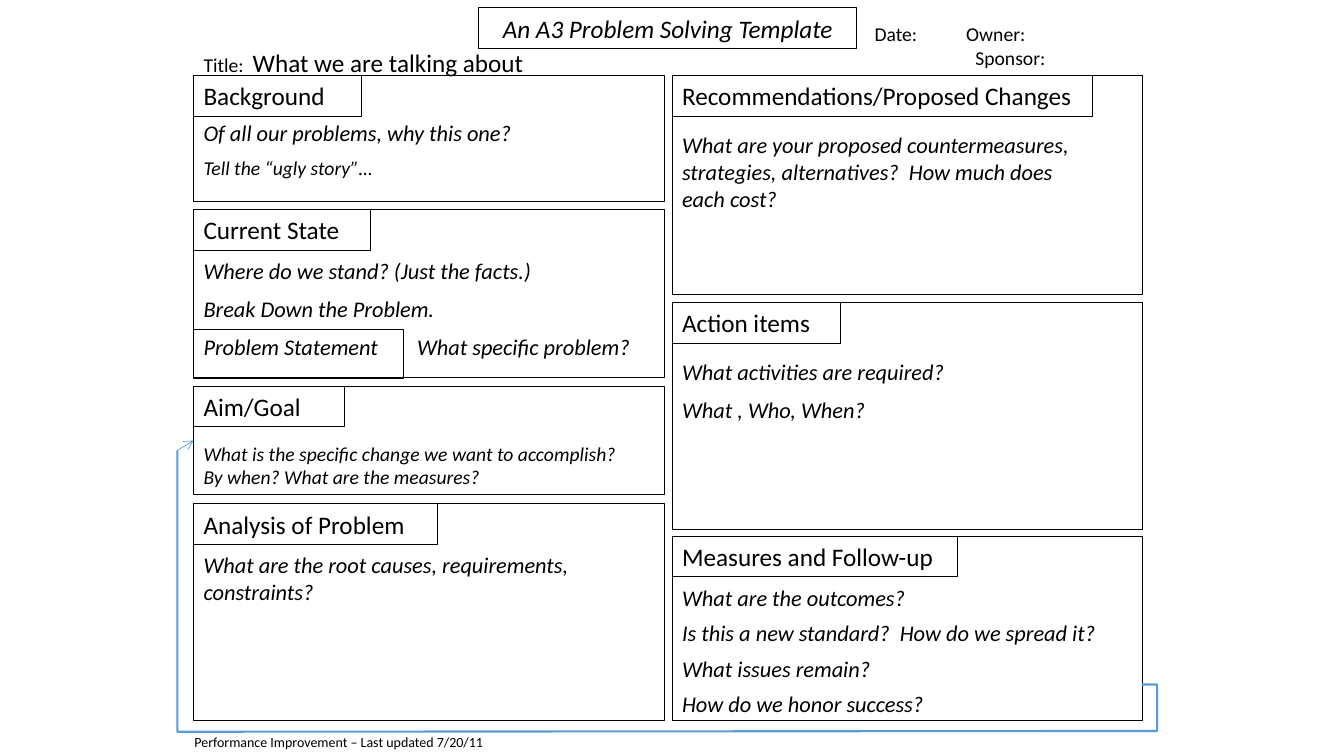
from dataclasses import dataclass

from lxml.etree import SubElement
from pptx import Presentation
from pptx.dml.color import RGBColor as Rgb
from pptx.enum.shapes import MSO_CONNECTOR as Link, MSO_SHAPE as Kind
from pptx.enum.text import MSO_ANCHOR as Anchor, PP_ALIGN as Align
from pptx.oxml.ns import qn
from pptx.shapes.autoshape import Shape
from pptx.shapes.shapetree import SlideShapes as Shapes
from pptx.text.text import _Paragraph as Para
from pptx.util import Cm, Pt


@dataclass(frozen=True)
class Theme:
    font: str = "Calibri"
    ink: Rgb = Rgb(0, 0, 0)
    blue: Rgb = Rgb(0x5B, 0x9B, 0xD5)
    head: int = 18
    body: int = 16
    small: int = 14
    foot: int = 10


@dataclass(frozen=True)
class Line:
    text: str
    size: int
    italic: bool = False
    gap: float = 0
    tabs: tuple[float, ...] = ()
    align: Align = Align.LEFT


@dataclass(frozen=True)
class Panel:
    """One section: a frame, a heading label and its guiding questions."""
    name: str
    left: float
    top: float
    height: float
    label: float
    note_top: float
    note_width: float
    lines: tuple[Line, ...]


THEME = Theme()
LEFT, RIGHT, WIDTH, LABEL = 4.88, 16.94, 11.86, 1.03


def ask(text: str, size: int = THEME.body, gap: float | None = None,
        tabs: tuple[float, ...] = ()) -> Line:
    """An italic question; the gap above it is half its size by default."""
    return Line(text, size, True, size / 2 if gap is None else gap, tabs)


AIM = Panel("Aim/Goal", LEFT, 9.73, 2.74, 3.81, 11, 11, (
    ask("What is the specific change we want to accomplish? "
        "By when? What are the measures?", THEME.small),))
PANELS = (
    Panel("Background", LEFT, 1.91, 3.18, 4.24, 2.87, 11.43, (
        ask("Of all our problems, why this one?"),
        ask("Tell the “ugly story”…", THEME.small))),
    Panel("Current State", LEFT, 5.28, 4.24, 4.45, 6.35, 11.63, (
        ask("Where do we stand? (Just the facts.)"),
        ask("Break Down the Problem."),
        ask("Problem Statement\tWhat specific problem?", tabs=(5.38,)))),
    AIM,
    Panel("Analysis of Problem", LEFT, 12.7, 5.46, 6.15, 13.77, 11.63, (
        ask("What are the root causes, requirements, constraints?"),)),
    Panel("Recommendations/Proposed Changes", RIGHT, 1.91, 5.51, 10.59, 3.18, 10.8, (
        ask("What are your proposed countermeasures, strategies, "
            "alternatives?  How much does each cost?"),)),
    Panel("Action items", RIGHT, 7.62, 5.72, 4.24, 8.89, 11, (
        ask("What activities are required?"),
        ask("What , Who, When?"))),
    Panel("Measures and Follow-up", RIGHT, 13.51, 4.65, 7.19, 14.6, 11, (
        ask("What are the outcomes?", gap=6),
        ask("Is this a new standard?  How do we spread it?", gap=6),
        ask("What issues remain?", gap=6),
        ask("How do we honor success?", gap=6))),
)


def set_tabs(para: Para, stops: tuple[float, ...]) -> None:
    props = para._p.get_or_add_pPr()
    tabs = SubElement(props, qn("a:tabLst"))
    for stop in stops:
        SubElement(tabs, qn("a:tab"), pos=str(int(Cm(stop))), algn="l")


def write(shape: Shape, lines: tuple[Line, ...]) -> None:
    frame = shape.text_frame
    frame.word_wrap = True
    frame.vertical_anchor = Anchor.TOP
    for index, line in enumerate(lines):
        para = frame.add_paragraph() if index else frame.paragraphs[0]
        para.text = line.text
        para.alignment = line.align
        para.space_before = Pt(line.gap)
        font = para.font
        font.name, font.size, font.italic = THEME.font, Pt(line.size), line.italic
        font.color.rgb = THEME.ink
        if line.tabs:
            set_tabs(para, line.tabs)


def add_box(shapes: Shapes, left: float, top: float, width: float, height: float,
            *lines: Line) -> Shape:
    """An unfilled rectangle with a thin black outline."""
    box = shapes.add_shape(Kind.RECTANGLE, Cm(left), Cm(top), Cm(width), Cm(height))
    box.shadow.inherit = False
    box.fill.background()
    box.line.color.rgb = THEME.ink
    box.line.width = Pt(0.75)
    if lines:
        write(box, lines)
    return box


def add_text(shapes: Shapes, left: float, top: float, width: float, height: float,
             *lines: Line) -> Shape:
    box = shapes.add_textbox(Cm(left), Cm(top), Cm(width), Cm(height))
    write(box, lines)
    return box


def add_panel(shapes: Shapes, panel: Panel) -> Shape:
    frame = add_box(shapes, panel.left, panel.top, WIDTH, panel.height)
    add_box(shapes, panel.left, panel.top, panel.label, LABEL,
            Line(panel.name, THEME.head))
    add_text(shapes, panel.left, panel.note_top, panel.note_width,
             panel.top + panel.height - panel.note_top, *panel.lines)
    return frame


def add_loop(shapes: Shapes, goal: Shape) -> None:
    """The feedback line from the follow-up panel round to the goal."""
    first, *rest = [(Cm(x), Cm(y)) for x, y in (
        (28.78, 17.25), (29.16, 17.25), (29.16, 18.42), (4.47, 18.44), (4.47, 11.35))]
    maker = shapes.build_freeform(*first)
    maker.add_line_segments(rest, close=False)
    loop = maker.convert_to_shape()
    loop.shadow.inherit = False
    loop.fill.background()
    loop.line.color.rgb = THEME.blue
    loop.line.width = Pt(1.5)

    arrow = shapes.add_connector(Link.STRAIGHT, *rest[-1], goal.left, goal.top)
    arrow.end_connect(goal, 1)
    arrow.line.color.rgb = THEME.blue
    arrow.line.width = Pt(0.5)
    SubElement(arrow.line._get_or_add_ln(), qn("a:tailEnd"), type="arrow")
    SubElement(arrow._element.spPr, qn("a:effectLst"))


def main() -> None:
    deck = Presentation()
    deck.slide_width, deck.slide_height = Cm(33.87), Cm(19.05)
    shapes = deck.slides.add_slide(deck.slide_layouts[6]).shapes

    title = add_text(shapes, LEFT, 1.07, 16.31, 1.02, Line("Title:  ", THEME.small))
    topic = title.text_frame.paragraphs[0].add_run()
    topic.text = "What we are talking about"
    topic.font.size = Pt(THEME.head)

    frames = {panel.name: add_panel(shapes, panel) for panel in PANELS}
    add_box(shapes, LEFT, 8.31, 5.28, 1.22)
    add_text(shapes, 16.71, 0.43, 12.4, 1.45,
             Line("\tDate:\tOwner:", THEME.small, tabs=(5.08, 7.39)),
             Line("\tSponsor:", THEME.small, tabs=(7.62,)))
    add_box(shapes, 12.07, 0.2, 9.52, 1.02,
            Line("An A3 Problem Solving Template", THEME.head, True, align=Align.CENTER))
    add_loop(shapes, frames[AIM.name])
    add_text(shapes, 4.65, 18.36, 8.05, 0.69,
             Line("Performance Improvement – Last updated 7/20/11", THEME.foot))
    deck.save("out.pptx")


if __name__ == "__main__":
    main()
